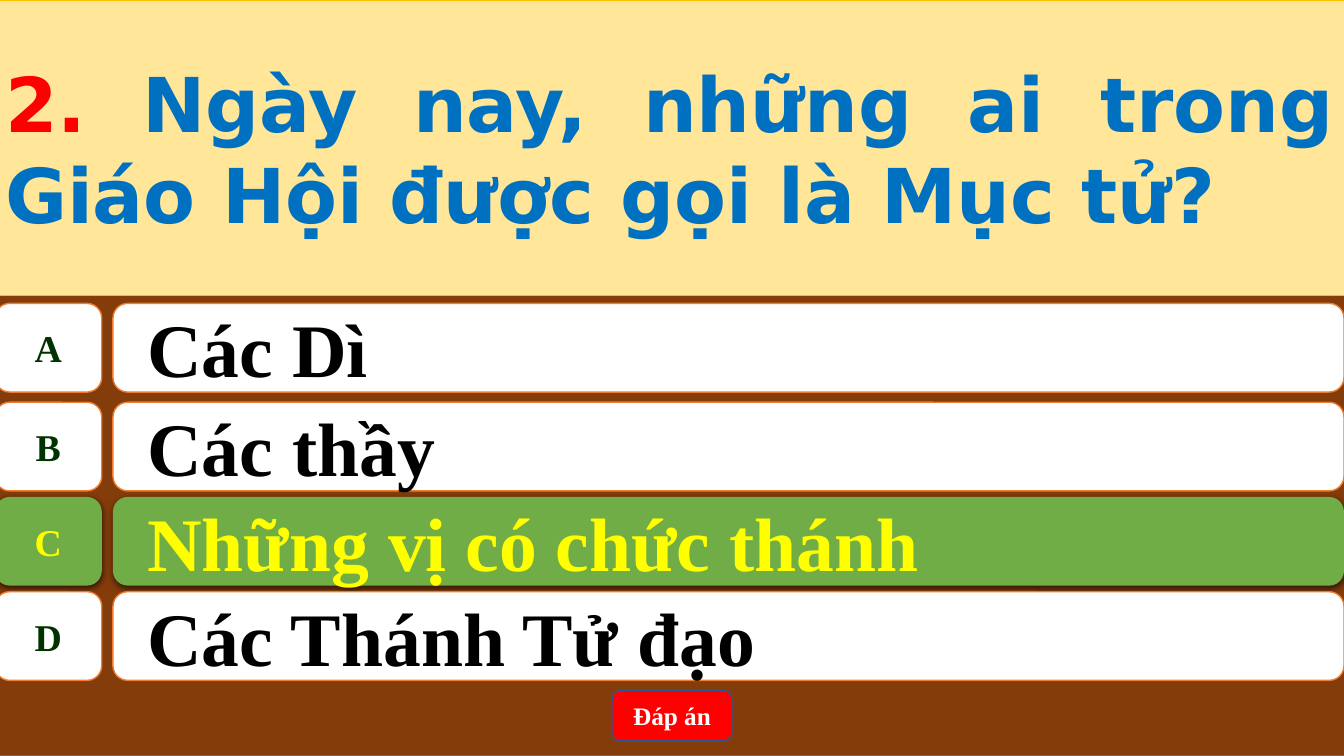
from dataclasses import dataclass

from lxml.etree import SubElement
from pptx import Presentation
from pptx.dml.color import RGBColor
from pptx.enum.shapes import MSO_SHAPE as Preset
from pptx.enum.text import MSO_ANCHOR as Anchor, MSO_AUTO_SIZE as AutoSize, PP_ALIGN as Align
from pptx.oxml.ns import qn
from pptx.shapes.autoshape import Shape
from pptx.slide import Slide
from pptx.text.text import _Run as Run
from pptx.util import Inches, Pt


@dataclass(frozen=True)
class Theme:
    backdrop: str = "843C0B"
    backdrop_line: str = "43739E"
    band: str = "FFE699"
    band_line: str = "FFC000"
    number: str = "FF0000"
    question: str = "0070C0"
    tile: str = "FFFFFF"
    tile_line: str = "ED7D31"
    letter: str = "003300"
    answer: str = "000000"
    correct_tile: str = "70AD47"
    correct_text: str = "FFFF00"
    button: str = "FF0000"
    button_line: str = "325491"
    button_text: str = "FFFFFF"
    question_font: str = "DejaVu Sans"
    answer_font: str = "Times New Roman"
    large: int = 54
    medium: int = 27
    small: int = 18


@dataclass(frozen=True)
class Box:
    left: float
    top: float
    width: float
    height: float


@dataclass(frozen=True)
class Answer:
    letter: str
    text: str
    top: float
    correct: bool = False


THEME = Theme()
EDGE, FULL_WIDTH = -0.05, 13.39
ROW_HEIGHT = 0.88
ANSWERS = (
    Answer("A", "Các Dì", 3.01),
    Answer("B", "Các thầy", 3.99),
    Answer("C", "Những vị có chức thánh", 4.93, correct=True),
    Answer("D", "Các Thánh Tử đạo", 5.87),
)


def paint(shape: Shape, fill: str, line: str | None, line_width: float = 1) -> None:
    shape.fill.solid()
    shape.fill.fore_color.rgb = RGBColor.from_string(fill)
    if line is None:
        shape.line.fill.background()
    else:
        shape.line.color.rgb = RGBColor.from_string(line)
        shape.line.width = Pt(line_width)


def add_box(page: Slide, preset: Preset, box: Box, fill: str, line: str | None) -> Shape:
    shape = page.shapes.add_shape(
        preset, Inches(box.left), Inches(box.top), Inches(box.width), Inches(box.height))
    shape.shadow.inherit = False
    paint(shape, fill, line)
    return shape


def format_run(span: Run, font: str, size: int, color: str) -> None:
    span.font.name = font
    span.font.size = Pt(size)
    span.font.bold = True
    span.font.color.rgb = RGBColor.from_string(color)


def write(shape: Shape, text: str, size: int, color: str,
          align: Align = Align.CENTER, wrap: bool = True) -> None:
    frame = shape.text_frame
    frame.text = text
    frame.word_wrap = wrap
    frame.vertical_anchor = Anchor.MIDDLE
    para = frame.paragraphs[0]
    para.alignment = align
    format_run(para.runs[0], THEME.answer_font, size, color)


def indent(shape: Shape, inches: float) -> None:
    properties = shape.text_frame.paragraphs[0]._p.get_or_add_pPr()
    properties.set("marL", str(Inches(inches)))
    properties.set("indent", "0")


def cast_shadow(shape: Shape) -> None:
    """Give the shape a soft black shadow straight below it."""
    effects = shape._element.spPr.find(qn("a:effectLst"))
    shadow = SubElement(effects, qn("a:outerShdw"), blurRad=str(Pt(4.5)), dist=str(Pt(1.5)),
                        dir="5400000", algn="ctr", rotWithShape="0")
    color = SubElement(shadow, qn("a:srgbClr"), val="000000")
    SubElement(color, qn("a:alpha"), val="63000")


def add_backdrop(page: Slide) -> None:
    backdrop = add_box(page, Preset.RECTANGLE, Box(EDGE, 0, FULL_WIDTH, 7.5),
                       THEME.backdrop, THEME.backdrop_line)
    page.shapes._spTree.insert(2, backdrop._element)


def add_question(page: Slide, number: str, question: str) -> None:
    title = page.shapes.title
    title.left, title.top = Inches(EDGE), Inches(0)
    title.width, title.height = Inches(FULL_WIDTH), Inches(2.93)
    paint(title, THEME.band, THEME.band_line, 0.5)
    frame = title.text_frame
    frame.word_wrap = True
    frame.auto_size = AutoSize.NONE
    frame.vertical_anchor = Anchor.MIDDLE
    para = frame.paragraphs[0]
    para.alignment = Align.JUSTIFY
    para.line_spacing = 1.0
    for text, color in ((number, THEME.number), (question, THEME.question)):
        span = para.add_run()
        span.text = text
        format_run(span, THEME.question_font, THEME.large, color)


def add_answer(page: Slide, answer: Answer) -> None:
    fill, line = (THEME.correct_tile, None) if answer.correct else (THEME.tile, THEME.tile_line)
    bar = add_box(page, Preset.ROUNDED_RECTANGLE,
                  Box(1.12, answer.top, 12.21, ROW_HEIGHT), fill, line)
    tile = add_box(page, Preset.FLOWCHART_ALTERNATE_PROCESS,
                   Box(EDGE, answer.top, 1.06, ROW_HEIGHT), fill, line)
    write(bar, answer.text, THEME.large,
          THEME.correct_text if answer.correct else THEME.answer, Align.LEFT)
    indent(bar, 0.2)
    write(tile, answer.letter, THEME.medium,
          THEME.correct_text if answer.correct else THEME.letter, wrap=False)
    if answer.correct:
        cast_shadow(bar)
        cast_shadow(tile)


def add_answer_button(page: Slide) -> None:
    button = add_box(page, Preset.ROUNDED_RECTANGLE, Box(6.07, 6.85, 1.19, 0.5),
                     THEME.button, THEME.button_line)
    write(button, "Đáp án", THEME.small, THEME.button_text)


def main() -> None:
    deck = Presentation()
    deck.slide_width, deck.slide_height = Inches(13.33), Inches(7.5)
    page = deck.slides.add_slide(deck.slide_layouts.get_by_name("Title Only"))
    add_backdrop(page)
    add_question(page, "2. ", "Ngày nay, những ai trong Giáo Hội được gọi là Mục tử?")
    for answer in ANSWERS:
        add_answer(page, answer)
    add_answer_button(page)
    deck.save("out.pptx")


if __name__ == "__main__":
    main()
